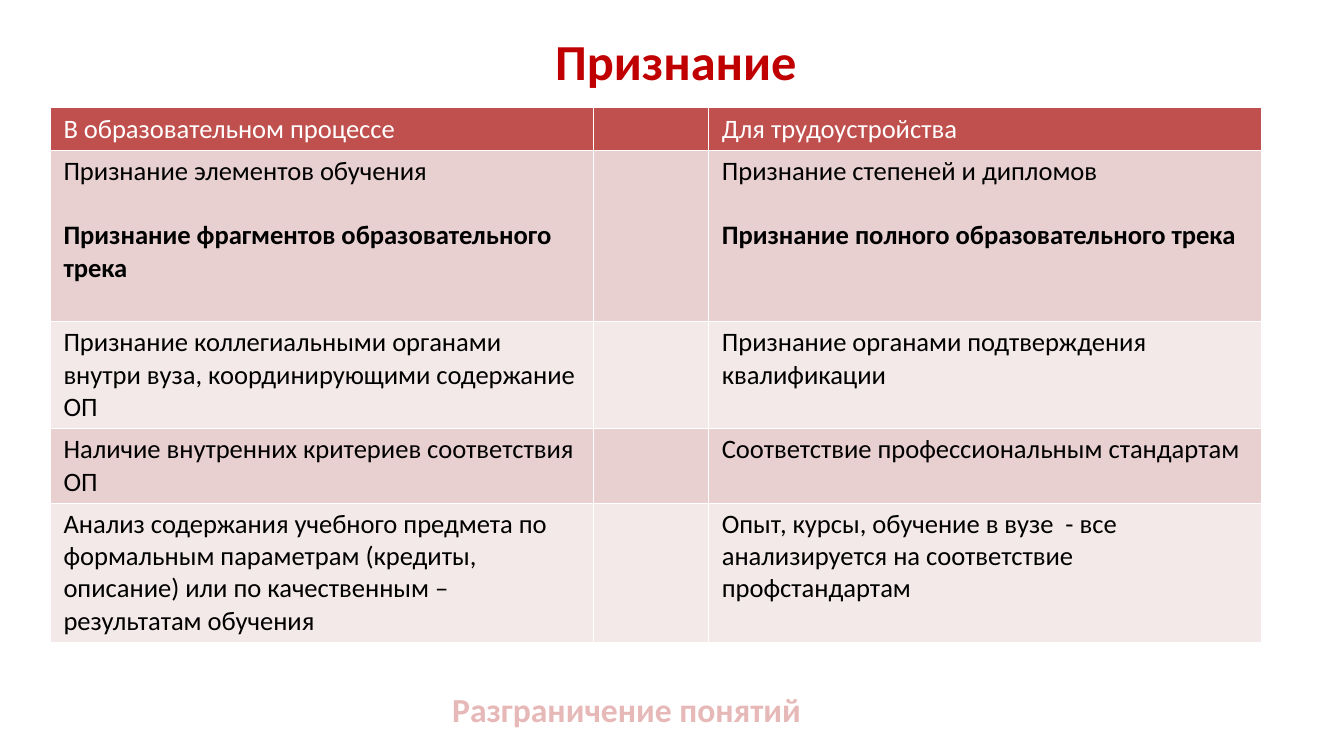
from lxml.etree import SubElement
from pptx import Presentation
from pptx.dml.color import RGBColor as Rgb
from pptx.enum.text import MSO_ANCHOR as Anchor, MSO_AUTO_SIZE as AutoSize, PP_ALIGN as Align
from pptx.oxml.ns import qn
from pptx.util import Inches, Pt

THEME = {
    "font": "Calibri",
    "title": {"size": 36, "color": "C00000", "bold": True},
    "header": {"size": 19, "color": "FFFFFF", "bold": False},
    "plain": {"size": 19, "color": "000000", "bold": False},
    "strong": {"size": 19, "color": "000000", "bold": True},
    "caption": {"size": 24, "color": "E6B9B8", "bold": True},
    "header_fill": "C0504D",
    "bands": ["E8D0D0", "F4E9E9"],
    "rule": "FFFFFF",
}

COLUMN_WIDTHS = [5.39, 1.14, 5.48]
ROW_HEIGHTS = [0.42, 1.7, 1.06, 0.74, 1.38]
TABLE_LEFT, TABLE_TOP = 0.5, 1.07
EDUCATION, EMPLOYMENT = 0, 2
CELL_MARGINS = {"margin_left": 0.13, "margin_right": 0.13,
                "margin_top": 0.05, "margin_bottom": 0.05}

COMPARISON = [
    (["В образовательном процессе"], ["Для трудоустройства"]),
    (["Признание элементов обучения", "Признание фрагментов образовательного трека"],
     ["Признание степеней и дипломов", "Признание полного образовательного трека"]),
    (["Признание коллегиальными органами внутри вуза, координирующими содержание ОП"],
     ["Признание органами подтверждения квалификации"]),
    (["Наличие внутренних критериев соответствия ОП"],
     ["Соответствие профессиональным стандартам"]),
    (["Анализ содержания учебного предмета по формальным параметрам "
      "(кредиты, описание) или по качественным – результатам обучения"],
     ["Опыт, курсы, обучение в вузе  - все анализируется на соответствие профстандартам"]),
]


def write(paragraph, wording, style, align=Align.LEFT):
    paragraph.alignment = align
    run = paragraph.add_run()
    run.text = wording
    look = THEME[style]
    values = {"name": THEME["font"], "size": Pt(look["size"]), "bold": look["bold"]}
    for attribute, value in values.items():
        setattr(run.font, attribute, value)
    run.font.color.rgb = Rgb.from_string(look["color"])


def paint(cell, color):
    """Give the cell thin white borders and a plain fill."""
    properties = cell._tc.get_or_add_tcPr()
    for side in ("a:lnL", "a:lnR", "a:lnT", "a:lnB"):
        border = SubElement(properties, qn(side), w=str(Pt(1)))
        solid = SubElement(border, qn("a:solidFill"))
        SubElement(solid, qn("a:srgbClr"), val=THEME["rule"])
    cell.fill.solid()
    cell.fill.fore_color.rgb = Rgb.from_string(color)


deck = Presentation()
deck.slide_width, deck.slide_height = Inches(13.33), Inches(7.5)
slide = deck.slides.add_slide(deck.slide_layouts[5])

title = slide.shapes.title
title_place = {"left": 0.79, "top": 0.13, "width": 11.83, "height": 0.94}
for attribute, value in title_place.items():
    setattr(title, attribute, Inches(value))
title.text_frame.auto_size = AutoSize.NONE
title.text_frame.vertical_anchor = Anchor.MIDDLE
write(title.text_frame.paragraphs[0], "Признание", "title", Align.CENTER)

table = slide.shapes.add_table(
    len(ROW_HEIGHTS), len(COLUMN_WIDTHS), Inches(TABLE_LEFT), Inches(TABLE_TOP),
    Inches(sum(COLUMN_WIDTHS)), Inches(sum(ROW_HEIGHTS))).table
for column, width in zip(table.columns, COLUMN_WIDTHS):
    column.width = Inches(width)

for index, (row, height) in enumerate(zip(table.rows, ROW_HEIGHTS)):
    row.height = Inches(height)
    band = THEME["bands"][(index - 1) % 2] if index else THEME["header_fill"]
    for cell in row.cells:
        paint(cell, band)
        for attribute, value in CELL_MARGINS.items():
            setattr(cell, attribute, Inches(value))
    for position, statements in zip((EDUCATION, EMPLOYMENT), COMPARISON[index]):
        frame = row.cells[position].text_frame
        write(frame.paragraphs[0], statements[0], "plain" if index else "header")
        for conclusion in statements[1:]:
            paragraph = frame.add_paragraph()
            paragraph.space_before = Pt(23)
            write(paragraph, conclusion, "strong")

caption = slide.shapes.add_textbox(Inches(4.29), Inches(6.79), Inches(3.85), Inches(0.5))
caption.text_frame.word_wrap = False
write(caption.text_frame.paragraphs[0], "Разграничение понятий", "caption", Align.CENTER)

deck.save("out.pptx")
